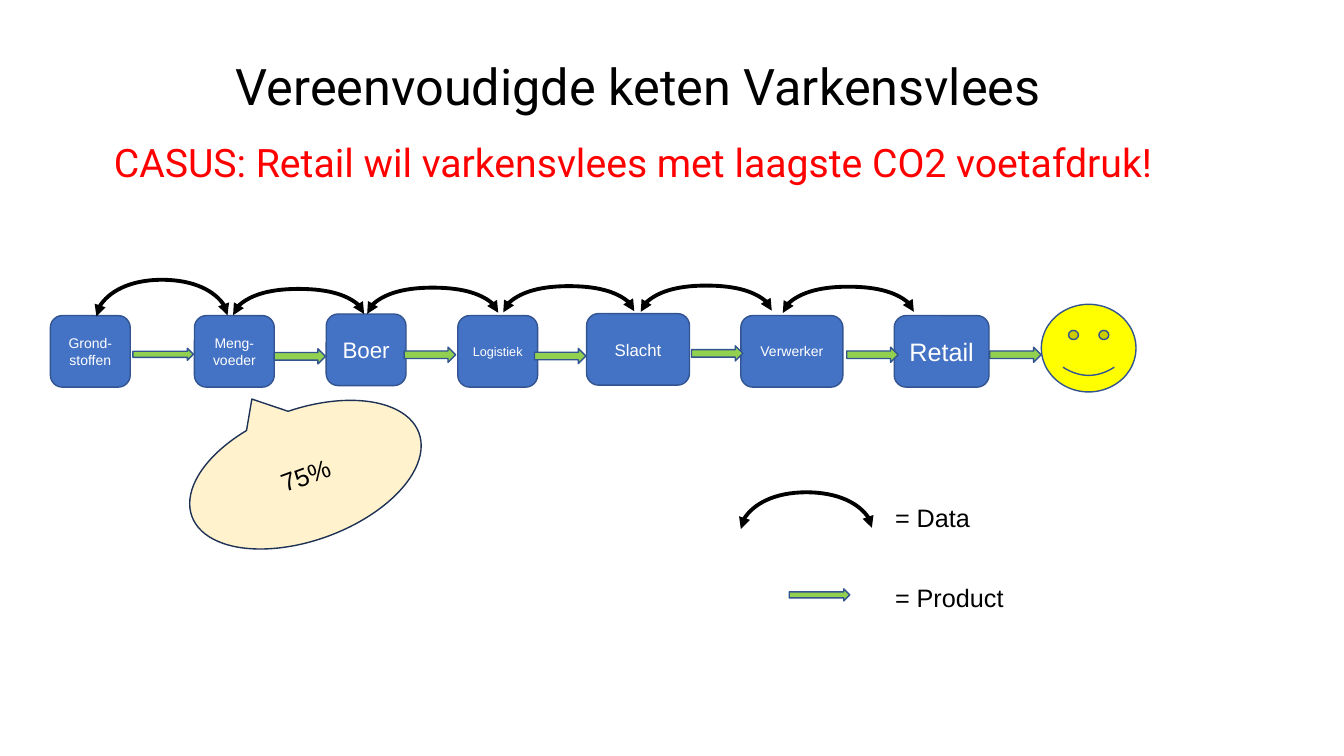
import dataclasses

import pptx
import pptx.dml.color
import pptx.enum.shapes
import pptx.enum.text
import pptx.oxml
import pptx.oxml.ns
import pptx.util

Pt = pptx.util.Pt
Shape = pptx.enum.shapes.MSO_SHAPE
Align = pptx.enum.text.PP_ALIGN
Anchor = pptx.enum.text.MSO_ANCHOR


@dataclasses.dataclass(frozen=True)
class Theme:
    heading_font: str = "Roboto"
    body_font: str = "Arial"
    black: str = "000000"
    white: str = "FFFFFF"
    case: str = "FF0000"
    stage: str = "4472C4"
    outline: str = "325491"
    product: str = "92D050"
    smiley: str = "FFFF00"
    callout: str = "FFF2CC"
    callout_outline: str = "1E3256"
    title_size: float = 36
    case_size: float = 28
    label_size: float = 18
    outline_width: float = 1
    data_width: float = 2.75


class ChainSlide:
    def __init__(self, page, theme):
        self.page = page
        self.theme = theme

    def color(self, value):
        return pptx.dml.color.RGBColor.from_string(value)

    def fill_text(self, box, text, size, font, color, align):
        frame = box.text_frame
        frame.word_wrap = True
        frame.text = text
        for para in frame.paragraphs:
            para.alignment = align
            para.font.size = Pt(size)
            para.font.name = font
            para.font.color.rgb = self.color(color)

    def text(self, frame, text, size, font, color, align=Align.LEFT):
        box = self.page.shapes.add_textbox(*map(Pt, frame))
        self.fill_text(box, text, size, font, color, align)
        return box

    def shape(self, kind, frame, fill, outline=None):
        shape = self.page.shapes.add_shape(kind, *map(Pt, frame))
        shape.shadow.inherit = False
        shape.fill.solid()
        shape.fill.fore_color.rgb = self.color(fill)
        shape.line.color.rgb = self.color(outline or self.theme.outline)
        shape.line.width = Pt(self.theme.outline_width)
        return shape

    def stage(self, name, size, left, top, width):
        box = self.shape(Shape.ROUNDED_RECTANGLE, (left, top, width, 51.1), self.theme.stage)
        box.text_frame.vertical_anchor = Anchor.MIDDLE
        self.fill_text(box, name, size, self.theme.body_font, self.theme.white, Align.CENTER)

    def product_arrow(self, left, top, width=36.7, height=10.8):
        self.shape(Shape.RIGHT_ARROW, (left, top, width, height), self.theme.product)

    def data_arc(self, start, base, rise, span=93.6, drop=0.86):
        left = start + (span - drop) / 2
        top = base - (span + drop) / 2
        arc = self.page.shapes.add_connector(
            pptx.enum.shapes.MSO_CONNECTOR.CURVE,
            Pt(left), Pt(top), Pt(left + drop), Pt(top + span))
        arc.line.color.rgb = self.color(self.theme.black)
        arc.line.width = Pt(self.theme.data_width)
        properties = arc._element.spPr
        qn = pptx.oxml.ns.qn
        namespace = pptx.oxml.ns.nsdecls("a")
        transform = properties.find(qn("a:xfrm"))
        for name, value in (("rot", "5400000"), ("flipH", "1"), ("flipV", "1")):
            transform.set(name, value)
        geometry = properties.find(qn("a:prstGeom"))
        bend = round(rise / drop * 100000)
        geometry.get_or_add_avLst().append(pptx.oxml.parse_xml(
            f'<a:gd {namespace} name="adj1" fmla="val {bend}"/>'))
        line = properties.find(qn("a:ln"))
        for end in ("headEnd", "tailEnd"):
            line.append(pptx.oxml.parse_xml(f'<a:{end} {namespace} type="triangle"/>'))
        properties.append(pptx.oxml.parse_xml(f"<a:effectLst {namespace}/>"))

    def callout(self, text, frame, rotation, tip):
        bubble = self.shape(Shape.OVAL_CALLOUT, frame, self.theme.callout,
                            self.theme.callout_outline)
        bubble.rotation = rotation
        bubble.adjustments[0], bubble.adjustments[1] = tip
        bubble.text_frame.vertical_anchor = Anchor.MIDDLE
        self.fill_text(bubble, text, self.theme.label_size, self.theme.body_font,
                       self.theme.black, Align.CENTER)


def main():
    theme = Theme()
    deck = pptx.Presentation()
    deck.slide_width, deck.slide_height = Pt(960), Pt(540)
    chain = ChainSlide(deck.slides.add_slide(deck.slide_layouts[6]), theme)

    title = chain.text((96, 18.7, 720, 90), "Vereenvoudigde keten Varkensvlees",
                       theme.title_size, theme.heading_font, theme.black, Align.CENTER)
    title.text_frame.vertical_anchor = Anchor.MIDDLE
    title.text_frame.paragraphs[0].line_spacing = 0.9
    chain.text((74.2, 95, 767.5, 41.2),
               "CASUS: Retail wil varkensvlees met laagste CO2 voetafdruk!",
               theme.case_size, theme.heading_font, theme.case)

    stages = (
        ("Grond-stoffen", 10, 36, 225.4, 57),
        ("Meng-\nvoeder", 10, 138.9, 225.4, 57),
        ("Boer", 16, 233, 224.3, 57),
        ("Logistiek", 9, 327, 225.4, 57),
        ("Slacht", 12, 419, 224, 73.5),
        ("Verwerker", 10, 529.2, 225.4, 72.9),
        ("Retail", 18, 638.8, 225.4, 67.7),
    )
    for stage in stages:
        chain.stage(*stage)
    chain.shape(Shape.SMILEY_FACE, (743.8, 217.4, 67.7, 62.6), theme.smiley)

    chain.product_arrow(95, 248.8, 43.2, 8.6)
    for left, top in ((195.8, 249.1), (288.7, 248), (381.8, 248.9),
                      (493.9, 247), (604.8, 248), (707, 248)):
        chain.product_arrow(left, top)

    chain.data_arc(68.9, 226.1, 26.5)
    for start, base in ((166.5, 225.2), (262.3, 224.3), (359.5, 223.2),
                        (457.7, 222.8), (559.2, 223.6)):
        chain.data_arc(start, base, 19)

    chain.data_arc(529.2, 377.9, 26.5)
    chain.product_arrow(563.8, 420.6, 43.2, 8.6)
    for label, top in (("= Data", 355), ("= Product", 412.2)):
        chain.text((632.2, top, 102.2, 29.1), label,
                   theme.label_size, theme.body_font, theme.black)
    chain.callout("75%", (131.8, 292.3, 172.8, 93.6), 339.8, (-0.1, -0.683))

    deck.save("out.pptx")


if __name__ == "__main__":
    main()
